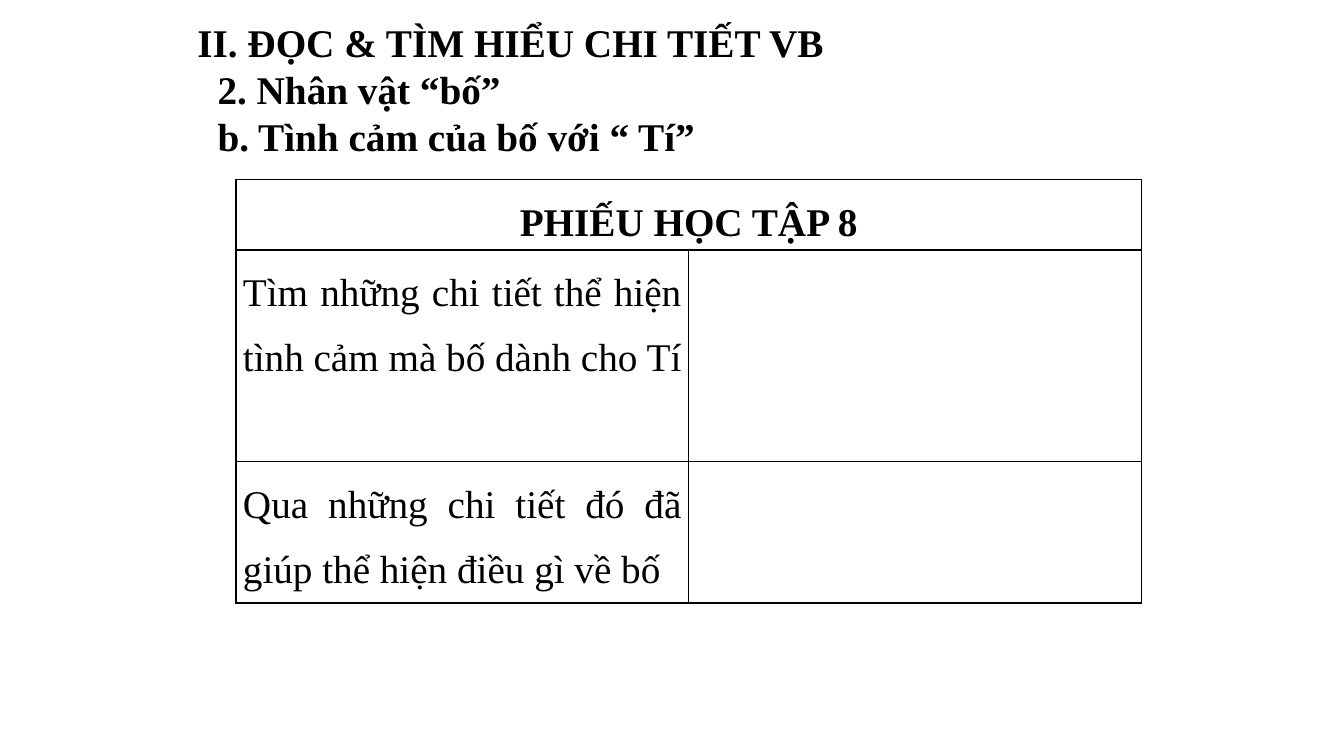
from lxml.etree import SubElement
from pptx import Presentation
from pptx.dml.color import RGBColor
from pptx.enum.text import MSO_AUTO_SIZE, PP_ALIGN
from pptx.oxml.ns import qn
from pptx.util import Inches, Pt

BLACK = "000000"
FONT = "Times New Roman"
HEADINGS = [
    ((1.86, 0.13, 6.46, 0.57), ["II. ĐỌC & TÌM HIỂU CHI TIẾT VB"]),
    ((2.06, 0.6, 6.06, 1.04), ["2. Nhân vật “bố”", "b. Tình cảm của bố với “ Tí”"]),
]
WORKSHEET_TITLE = "PHIẾU HỌC TẬP 8"
QUESTIONS = [
    "Tìm những chi tiết thể hiện tình cảm mà bố dành cho Tí",
    "Qua những chi tiết đó đã giúp thể hiện điều gì về bố",
]
LEFT, TOP, COLUMN_WIDTH = 2.34, 1.78, 4.49
LINE_HEIGHT = 0.7
ROW_LINES = [1, 3, 2]


def color(hex_value):
    return RGBColor.from_string(hex_value)


def style(paragraph, bold):
    font = paragraph.font
    font.name, font.size, font.bold = FONT, Pt(28), bold
    font.color.rgb = color(BLACK)


def add_heading(slide, box, lines):
    frame = slide.shapes.add_textbox(*map(Inches, box)).text_frame
    frame.word_wrap = True
    frame.auto_size = MSO_AUTO_SIZE.SHAPE_TO_FIT_TEXT
    frame.text = "\n".join(lines)
    for paragraph in frame.paragraphs:
        style(paragraph, bold=True)


def outline(cell):
    """Clear the cell's fill and draw a thin line on its four sides."""
    properties = cell._tc.get_or_add_tcPr()
    for side in ("a:lnL", "a:lnR", "a:lnT", "a:lnB"):
        line = SubElement(properties, qn(side), w=str(Pt(1)))
        fill = SubElement(line, qn("a:solidFill"))
        SubElement(fill, qn("a:srgbClr"), val=BLACK)
    cell.fill.background()


def write_cell(cell, text, alignment, bold):
    cell.text = text
    paragraph = cell.text_frame.paragraphs[0]
    paragraph.alignment = alignment
    paragraph.line_spacing = 1.5
    style(paragraph, bold)


def add_worksheet(slide):
    table = slide.shapes.add_table(
        len(ROW_LINES), 2, Inches(LEFT), Inches(TOP),
        Inches(2 * COLUMN_WIDTH), Inches(LINE_HEIGHT * sum(ROW_LINES))).table
    table.first_row = table.horz_banding = False
    for column in table.columns:
        column.width = Inches(COLUMN_WIDTH)
    for row, lines in zip(table.rows, ROW_LINES):
        row.height = Inches(LINE_HEIGHT * lines)
    for cell in table.iter_cells():
        cell.margin_left = cell.margin_right = Inches(0.07)
        cell.margin_top = cell.margin_bottom = 0
        outline(cell)
    title = table.cell(0, 0)
    title.merge(table.cell(0, 1))
    write_cell(title, WORKSHEET_TITLE, PP_ALIGN.CENTER, True)
    for row, question in enumerate(QUESTIONS, start=1):
        write_cell(table.cell(row, 0), question, PP_ALIGN.JUSTIFY, False)


def main():
    deck = Presentation()
    deck.slide_width, deck.slide_height = Inches(13.33), Inches(7.5)
    slide = deck.slides.add_slide(deck.slide_layouts[6])
    for box, lines in HEADINGS:
        add_heading(slide, box, lines)
    add_worksheet(slide)
    deck.save("out.pptx")


if __name__ == "__main__":
    main()
